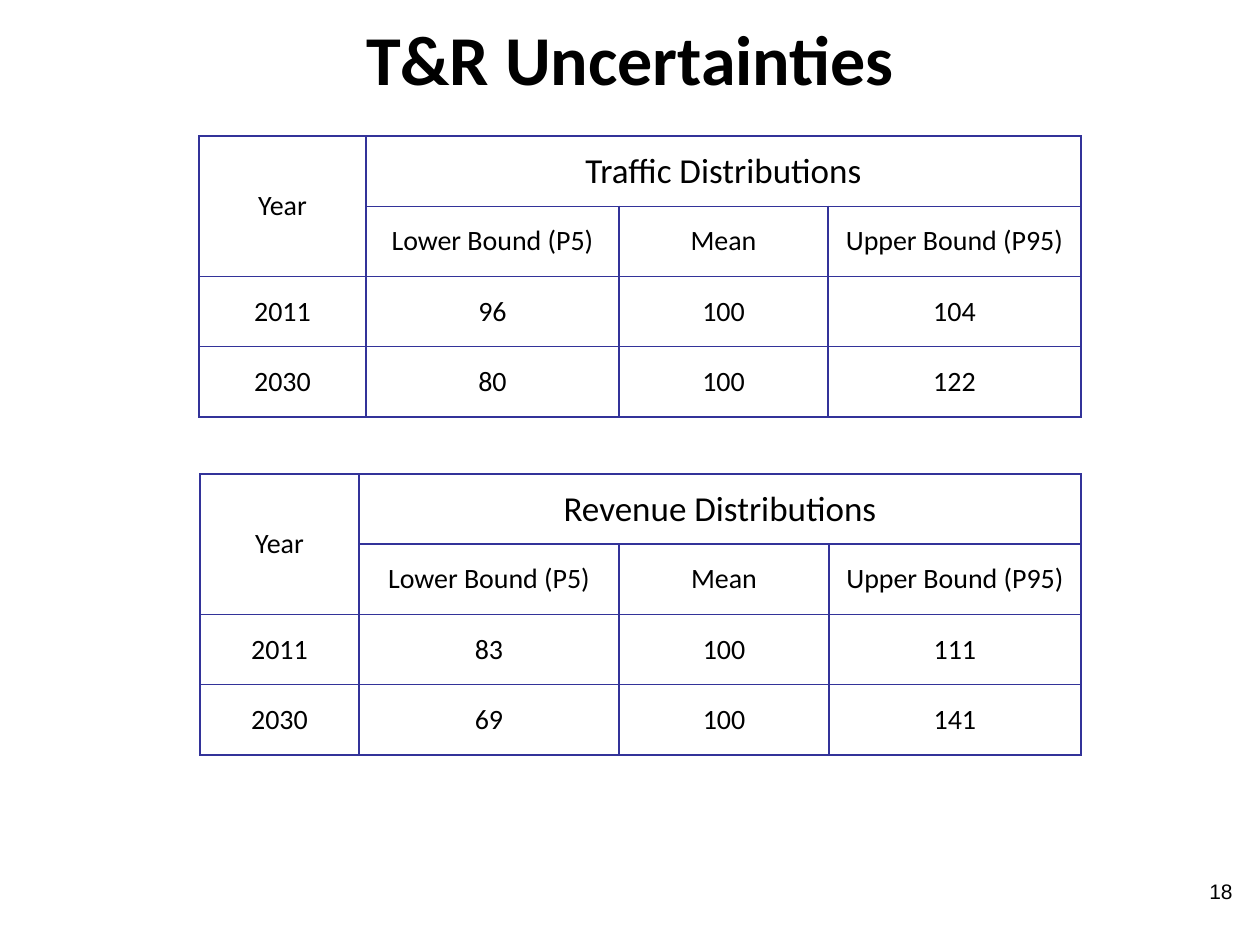
import pptx
import pptx.dml.color
import pptx.enum.text
import pptx.oxml
import pptx.util
import lxml.etree

TITLE = "T&R Uncertainties"
PAGE = "18"
BOUNDS = ["Lower Bound (P5)", "Mean", "Upper Bound (P95)"]
TABLES = [
    {
        "head": "Revenue Distributions",
        "at": (200, 474),
        "cols": [159, 260, 210, 252],
        "rows": [["2011", "83", "100", "111"], ["2030", "69", "100", "141"]],
    },
    {
        "head": "Traffic Distributions",
        "at": (199, 136),
        "cols": [167, 253, 209, 253],
        "rows": [["2011", "96", "100", "104"], ["2030", "80", "100", "122"]],
    },
]
HEIGHT = 281
INDENT = 48
COLORS = {"ink": "000000", "rule": "333399"}
CENTER = pptx.enum.text.PP_ALIGN.CENTER
MIDDLE = pptx.enum.text.MSO_ANCHOR.MIDDLE


def px(n):
    return pptx.util.Emu(round(n * 914400 / 126))


def write(para, text, size, font="Calibri", bold=False):
    run = para.add_run()
    run.text = text
    run.font.size = pptx.util.Pt(size)
    run.font.name = font
    run.font.bold = bold
    run.font.color.rgb = pptx.dml.color.RGBColor.from_string(COLORS["ink"])


def border(cell):
    props = cell._tc.get_or_add_tcPr()
    for side in ("lnL", "lnR", "lnT", "lnB"):
        line = lxml.etree.SubElement(
            props, pptx.oxml.ns.qn("a:" + side), w=str(pptx.util.Pt(1)))
        fill = lxml.etree.SubElement(line, pptx.oxml.ns.qn("a:solidFill"))
        lxml.etree.SubElement(
            fill, pptx.oxml.ns.qn("a:srgbClr"), val=COLORS["rule"])
    cell.fill.background()


def fill_cell(cell, text, size):
    cell.vertical_anchor = MIDDLE
    para = cell.text_frame.paragraphs[0]
    para.alignment = CENTER
    props = para._p.get_or_add_pPr()
    props.set("marL", str(px(INDENT)))
    props.set("indent", str(-px(INDENT)))
    write(para, text, size)


def add_grid(slide, data):
    grid = [["Year", data["head"], "", ""], [""] + BOUNDS] + data["rows"]
    left, top = data["at"]
    cols = data["cols"]
    table = slide.shapes.add_table(
        len(grid), len(cols), px(left), px(top), px(sum(cols)), px(HEIGHT)).table
    table.first_row = False
    table.horz_banding = False
    for col, width in zip(table.columns, cols):
        col.width = px(width)
    for row in table.rows:
        row.height = px(HEIGHT / len(grid))
    for r, texts in enumerate(grid):
        for c, text in enumerate(texts):
            cell = table.cell(r, c)
            border(cell)
            if text:
                fill_cell(cell, text, 20 if text == data["head"] else 16)
    table.cell(0, 0).merge(table.cell(1, 0))
    table.cell(0, 1).merge(table.cell(0, 3))


def main():
    deck = pptx.Presentation()
    deck.slide_width, deck.slide_height = px(1260), px(945)
    slide = deck.slides.add_slide(deck.slide_layouts[5])

    for data in TABLES:
        add_grid(slide, data)

    title = slide.shapes.title
    title.left, title.top, title.width, title.height = px(0), px(0), px(1260), px(116)
    title.text_frame.vertical_anchor = MIDDLE
    para = title.text_frame.paragraphs[0]
    para.alignment = CENTER
    write(para, TITLE, 40, bold=True)

    page = slide.shapes.add_textbox(px(1197), px(872), px(53), px(38))
    page.text_frame.word_wrap = True
    write(page.text_frame.paragraphs[0], PAGE, 12, "Arial")

    deck.save("out.pptx")


if __name__ == "__main__":
    main()
